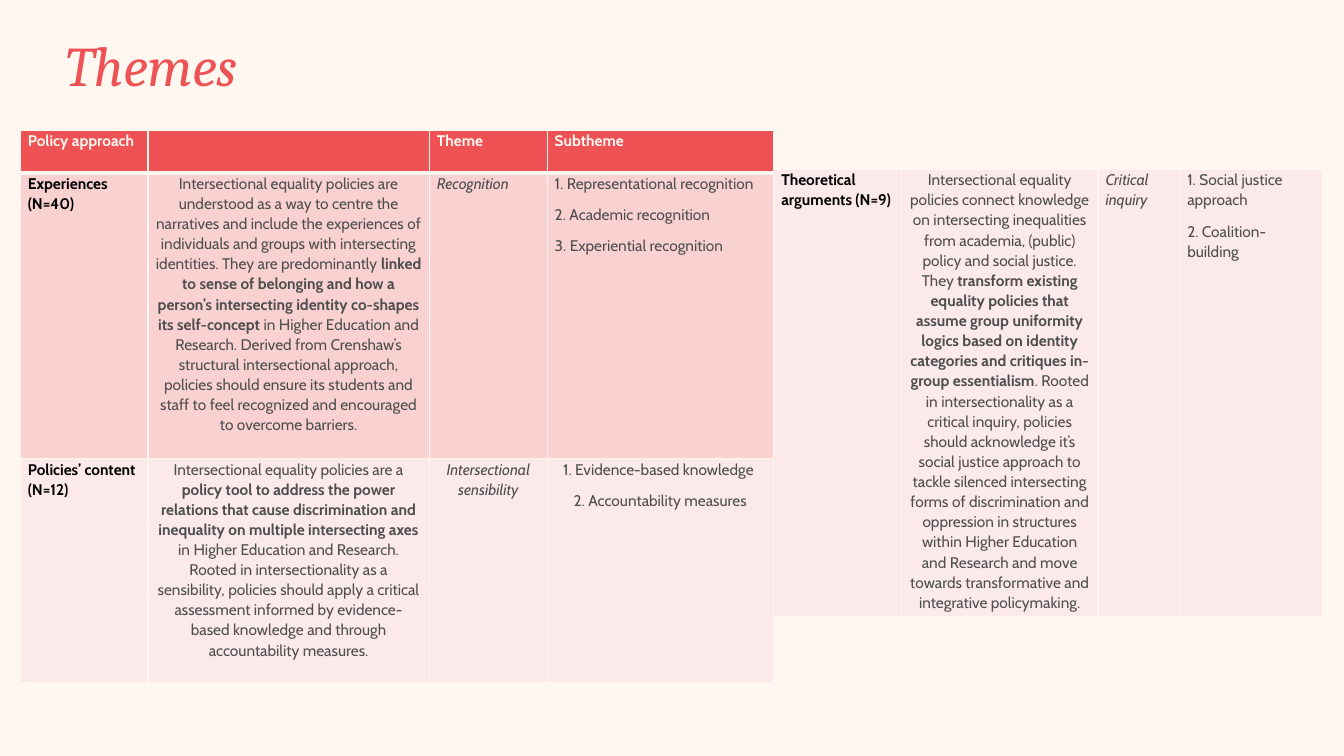
from pptx import Presentation
from pptx.dml.color import RGBColor
from pptx.enum.text import MSO_ANCHOR, PP_ALIGN
from pptx.oxml import parse_xml
from pptx.oxml.ns import nsdecls
from pptx.util import Cm, Pt

CREAM, CORAL, ROSE, BLUSH = "FFF7F0", "EF5255", "F9D1D1", "FCE9E9"
BLACK, GRAY = "000000", "4D4E4E"
LEFT, CENTER, JUSTIFY = PP_ALIGN.LEFT, PP_ALIGN.CENTER, PP_ALIGN.JUSTIFY


def paint(color_format, color):
    """Set a fill or font colour from a hex string."""
    if hasattr(color_format, "solid"):
        color_format.solid()
        color_format = color_format.fore_color
    color_format.rgb = RGBColor.from_string(color)


def write(paragraph, text, size=11, font="Cabin", color=GRAY, bold=False, italic=False):
    run = paragraph.add_run()
    run.text = text
    run.font.size, run.font.name = Pt(size), font
    run.font.bold, run.font.italic = bold, italic
    paint(run.font.color, color)


presentation = Presentation()
presentation.slide_width, presentation.slide_height = Cm(33.87), Cm(19.05)
slide = presentation.slides.add_slide(presentation.slide_layouts[5])
paint(slide.background.fill, CREAM)

title = slide.shapes.title
title.left, title.top, title.width, title.height = Cm(-3.99), Cm(0.17), Cm(9.96), Cm(3.12)
frame = title.text_frame
frame.margin_left = frame.margin_top = frame.margin_right = frame.margin_bottom = 0
frame.vertical_anchor = MSO_ANCHOR.MIDDLE
frame.paragraphs[0].alignment = PP_ALIGN.RIGHT
frame.paragraphs[0].line_spacing = 0.9
write(frame.paragraphs[0], "Themes", size=40, font="Cambria", color=CORAL, italic=True)

# A cell is (alignment, format, paragraphs); a paragraph is a list of runs,
# in which every second run is bold.
HEADING = {"color": CREAM, "bold": True}
APPROACH = {"color": BLACK, "bold": True}
THEME = {"italic": True}

header = [
    (LEFT, HEADING, [["Policy approach"]]),
    (LEFT, HEADING, []),
    (LEFT, HEADING, [["Theme"]]),
    (LEFT, HEADING, [["Subtheme"]]),
]
experiences = [
    (LEFT, APPROACH, [["Experiences (N=40)"]]),
    (CENTER, {}, [[
        "Intersectional equality policies are understood as a way to centre the narratives "
        "and include the experiences of individuals and groups with intersecting identities. "
        "They are predominantly ",
        "linked to sense of belonging and how a person’s intersecting identity co-shapes "
        "its self-concept ",
        "in Higher Education and Research. Derived from Crenshaw’s structural intersectional "
        "approach, policies should ensure its students and staff to feel recognized and "
        "encouraged to overcome barriers.",
    ]]),
    (LEFT, THEME, [["Recognition"]]),
    (LEFT, {}, [["1. Representational recognition"], ["2. Academic recognition"],
                ["3. Experiential recognition"]]),
]
theoretical_arguments = [
    (LEFT, APPROACH, [["Theoretical arguments (N=9)"]]),
    (CENTER, {}, [[
        "Intersectional equality policies connect knowledge on intersecting inequalities "
        "from academia, (public) policy and social justice. They ",
        "transform existing equality policies that assume group uniformity logics based on "
        "identity categories and critiques in-group essentialism",
        ". Rooted in intersectionality as a critical inquiry, policies should acknowledge "
        "it’s social justice approach to tackle silenced intersecting forms of "
        "discrimination and oppression in structures within Higher Education and Research "
        "and move towards transformative and integrative policymaking.",
    ]]),
    (JUSTIFY, THEME, [["Critical inquiry"]]),
    (LEFT, {}, [["1. Social justice approach"], ["2. Coalition-building"]]),
]
policies_content = [
    (LEFT, APPROACH, [["Policies’ content (N=12)"]]),
    (CENTER, {}, [[
        "Intersectional equality policies are a ",
        "policy tool to address the power relations that cause discrimination and "
        "inequality on multiple intersecting axes",
        " in Higher Education and Research. Rooted in intersectionality as a sensibility, "
        "policies should apply a critical assessment informed by evidence-based knowledge "
        "and through accountability measures.",
    ]]),
    (CENTER, THEME, [["Intersectional sensibility"]]),
    (CENTER, {}, [["1. Evidence-based knowledge "], ["2. Accountability measures"]]),
]

WIDE_COLUMNS = [3.22, 7.09, 2.97, 5.7]
NARROW_COLUMNS = [3.22, 4.95, 2.06, 3.61]
# left, top, column widths, rows as (height, fill, bottom border in points, cells)
tables = [
    (0.51, 3.29, WIDE_COLUMNS, [(1.07, CORAL, 3, header), (7.19, ROSE, 1, experiences)]),
    (19.5, 4.27, NARROW_COLUMNS, [(11.3, BLUSH, 3, theoretical_arguments)]),
    (0.51, 11.56, WIDE_COLUMNS, [(5.66, BLUSH, 3, policies_content)]),
]

for left, top, widths, rows in tables:
    height = sum(row[0] for row in rows)
    table = slide.shapes.add_table(
        len(rows), len(widths), Cm(left), Cm(top), Cm(sum(widths)), Cm(height)).table
    table.first_row = len(rows) > 1
    table.horz_banding = False
    for column, width in zip(table.columns, widths):
        column.width = Cm(width)
    for row, (row_height, fill, bottom_border, contents) in zip(table.rows, rows):
        row.height = Cm(row_height)
        for cell, (alignment, text_format, paragraphs) in zip(row.cells, contents):
            cell.margin_left = cell.margin_right = Cm(0.19)
            cell.margin_top = cell.margin_bottom = 0
            properties = cell._tc.get_or_add_tcPr()
            for side, points in (("L", 1), ("R", 1), ("T", 1), ("B", bottom_border)):
                properties.append(parse_xml(
                    f'<a:ln{side} {nsdecls("a")} w="{Pt(points)}"><a:solidFill>'
                    f'<a:srgbClr val="{CREAM}"/></a:solidFill></a:ln{side}>'))
            paint(cell.fill, fill)
            frame = cell.text_frame
            for index, runs in enumerate(paragraphs):
                paragraph = frame.add_paragraph() if index else frame.paragraphs[0]
                paragraph.alignment = alignment
                paragraph.line_spacing = 1.07
                paragraph.space_after = Pt(8)
                for position, text in enumerate(runs):
                    emphasis = {"bold": True} if position % 2 else {}
                    write(paragraph, text, **(text_format | emphasis))

presentation.save("out.pptx")
